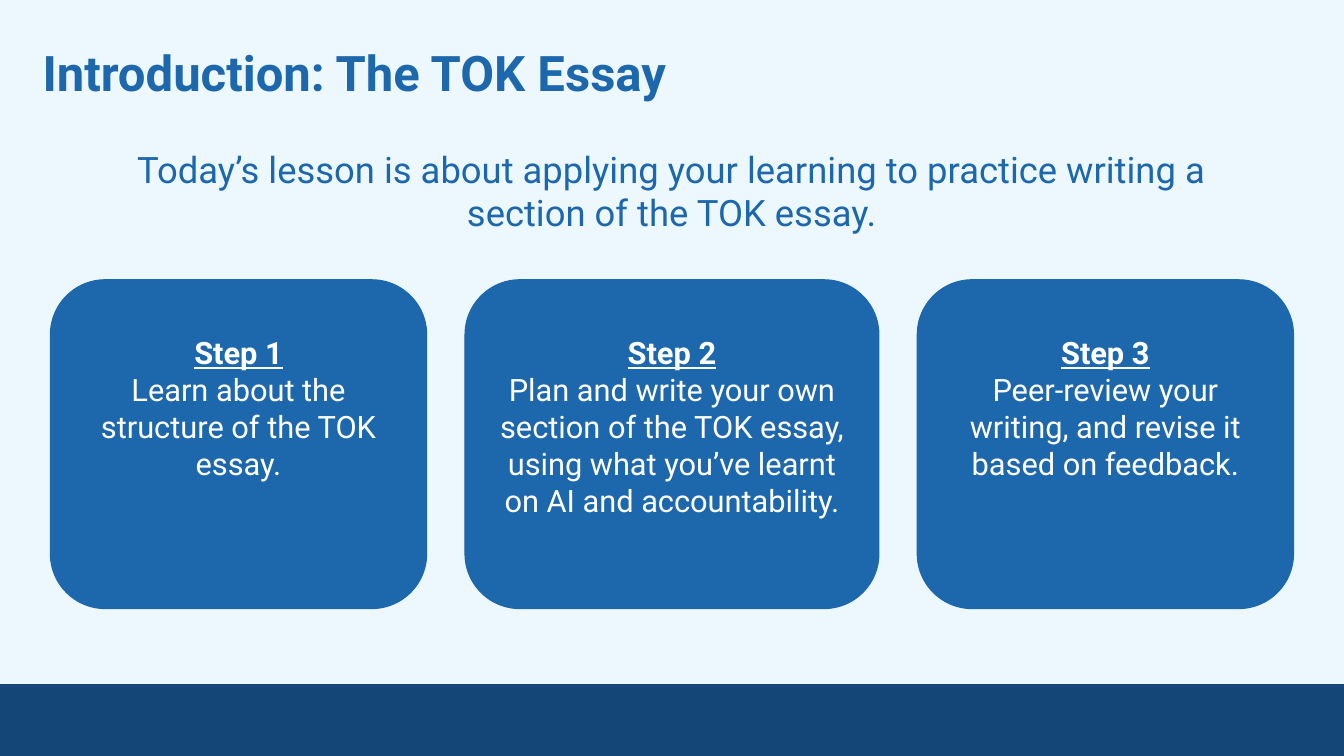
from pptx import Presentation, util as u
from pptx.dml.color import RGBColor
from pptx.enum import shapes, text

STEPS = [
    (28, "Step 1", "Learn about the structure of the TOK essay."),
    (30.8, "Step 2", "Plan and write your own section of the TOK essay, "
                     "using what you’ve learnt on AI and accountability."),
    (28, "Step 3", "Peer-review your writing, and revise it based on feedback."),
]


def rgb(value):
    return RGBColor.from_string(value)


def add_text(p, content, size, color, bold=False, underline=False,
             align=text.PP_ALIGN.CENTER, font="Roboto"):
    p.alignment = align
    r = p.add_run()
    r.text = content
    r.font.name = font
    r.font.size = u.Pt(size)
    r.font.bold = bold
    r.font.underline = underline
    r.font.color.rgb = rgb(color)


class Deck:
    blue, navy, pale, white = "1D67AC", "144777", "ECF8FE", "FFFFFF"

    def __init__(self):
        self.prs = Presentation()
        self.prs.slide_width = u.Inches(13.33)
        self.prs.slide_height = u.Inches(7.5)
        self.s = self.prs.slides.add_slide(self.prs.slide_layouts[5])
        fill = self.s.background.fill
        fill.solid()
        fill.fore_color.rgb = rgb(self.pale)

    def box(self, left, top, width, height):
        w, h = self.prs.slide_width, self.prs.slide_height
        return [int(share * side / 100) for share, side in
                zip((left, top, width, height), (w, h, w, h))]

    def frame(self, sp, inset, top=None, anchor=text.MSO_ANCHOR.TOP):
        tf = sp.text_frame
        tf.word_wrap = True
        tf.auto_size = text.MSO_AUTO_SIZE.NONE
        tf.vertical_anchor = anchor
        tf.margin_left = tf.margin_right = tf.margin_bottom = u.Inches(inset)
        tf.margin_top = u.Inches(inset if top is None else top)
        return tf

    def title(self, content, *place):
        sp = self.s.shapes.title
        sp.left, sp.top, sp.width, sp.height = self.box(*place)
        tf = self.frame(sp, 0.13, anchor=text.MSO_ANCHOR.MIDDLE)
        add_text(tf.paragraphs[0], content, 35, self.blue, bold=True,
                 align=text.PP_ALIGN.LEFT)

    def lead(self, content, *place):
        sp = self.s.shapes.add_textbox(*self.box(*place))
        add_text(self.frame(sp, 0.1).paragraphs[0], content, 26, self.blue)

    def panel(self, kind, color, *place):
        sp = self.s.shapes.add_shape(kind, *self.box(*place))
        sp.shadow.inherit = False
        sp.fill.solid()
        sp.fill.fore_color.rgb = rgb(color)
        sp.line.color.rgb = rgb(color)
        sp.line.width = u.Pt(0.75)
        return sp

    def footer(self, top):
        self.panel(shapes.MSO_SHAPE.RECTANGLE, self.navy, 0, top, 100, 100 - top)

    def card(self, heading, body, *place):
        sp = self.panel(shapes.MSO_SHAPE.ROUNDED_RECTANGLE, self.blue, *place)
        sp.adjustments[0] = 0.167
        tf = self.frame(sp, 0.1, top=0.38)
        add_text(tf.paragraphs[0], heading, 22, self.white, bold=True, underline=True)
        add_text(tf.add_paragraph(), body, 22, self.white)

    def cards(self, steps, margin, top, height):
        used = sum(width for width, _, _ in steps)
        gap = (100 - 2 * margin - used) / (len(steps) - 1)
        left = margin
        for width, heading, body in steps:
            self.card(heading, body, left, top, width, height)
            left += width + gap


def main():
    deck = Deck()
    deck.footer(90.5)
    deck.title("Introduction: The TOK Essay", 2.2, 3.75, 91.4, 11.5)
    deck.lead("Today’s lesson is about applying your learning to practice "
              "writing a section of the TOK essay.", 6.85, 18.1, 86.3, 14.4)
    deck.cards(STEPS, margin=3.75, top=37, height=43.5)
    deck.prs.save("out.pptx")


if __name__ == "__main__":
    main()
